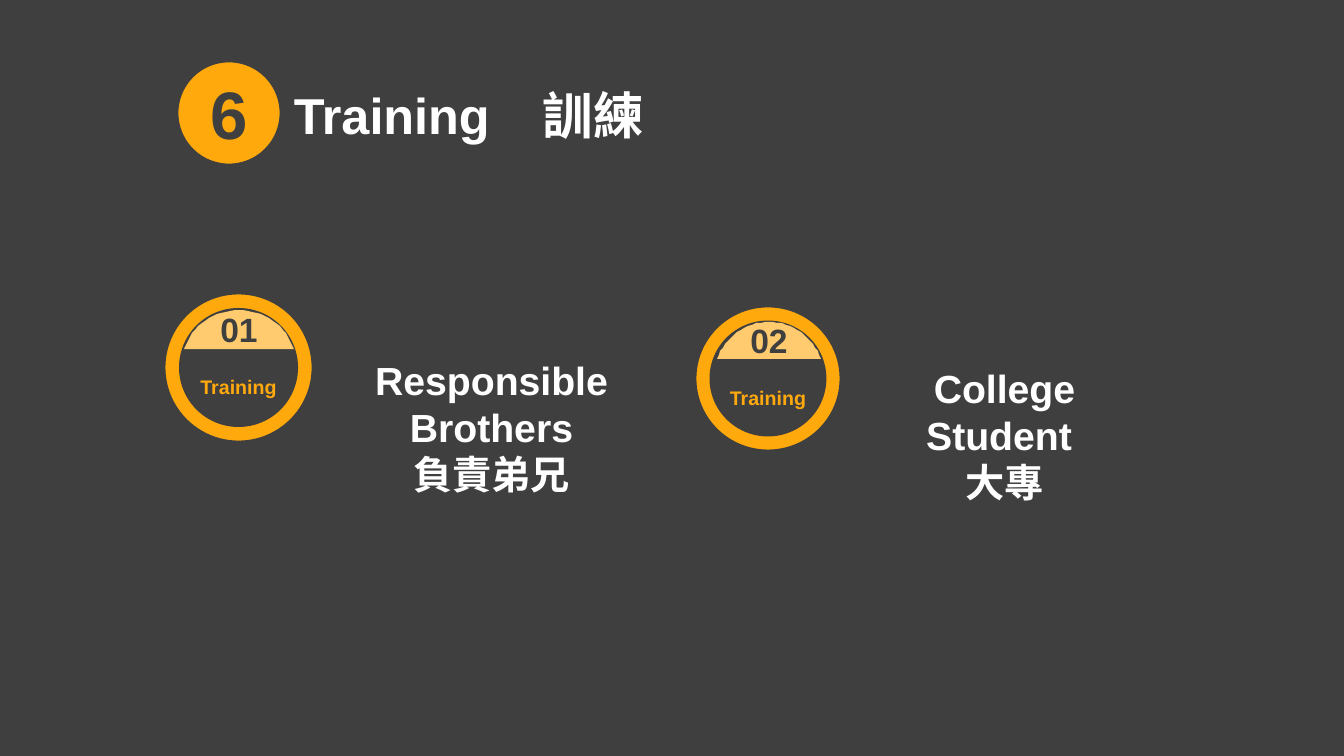
from math import asin, cos, pi, sin

from lxml import etree
from pptx import Presentation
from pptx.dml.color import RGBColor
from pptx.enum.shapes import MSO_SHAPE
from pptx.enum.text import MSO_ANCHOR, MSO_AUTO_SIZE, PP_ALIGN
from pptx.oxml.ns import qn
from pptx.util import Emu, Pt

PX = 914400 / 100.8
WIDTH, HEIGHT = 1344, 756
FONT = "Arial"
COLORS = {"dark": "3F3F3F", "orange": "FFA90D", "light": "FFCB6E", "white": "FFFFFF"}
OVAL, DONUT = MSO_SHAPE.OVAL, MSO_SHAPE.DONUT
CENTER, LEFT = PP_ALIGN.CENTER, PP_ALIGN.LEFT
TOP, MIDDLE, BOTTOM = MSO_ANCHOR.TOP, MSO_ANCHOR.MIDDLE, MSO_ANCHOR.BOTTOM
FIT_SHAPE = MSO_AUTO_SIZE.SHAPE_TO_FIT_TEXT
ARC_STEPS = 32


def px(length):
    return Emu(round(length * PX))


def rgb(name):
    return RGBColor.from_string(COLORS[name])


def write(shape, text, size, color, align=CENTER, anchor=MIDDLE):
    frame = shape.text_frame
    frame.text = text
    frame.word_wrap = True
    frame.vertical_anchor = anchor
    for paragraph in frame.paragraphs:
        paragraph.alignment = align
        for run in paragraph.runs:
            run.font.name = FONT
            run.font.size = Pt(size)
            run.font.bold = True
            run.font.color.rgb = rgb(color)
    return frame


def set_margins(frame, top=0):
    frame.margin_left = frame.margin_right = frame.margin_bottom = 0
    frame.margin_top = px(top)


def paint(shape, fill, outlined):
    shape.shadow.inherit = False
    shape.fill.solid()
    shape.fill.fore_color.rgb = rgb(fill)
    if outlined:
        shape.line.color.rgb = rgb("dark")
        shape.line.width = Pt(2)
    else:
        shape.line.fill.background()


def add_round(slide, kind, box, text, size, color, margin_top=0):
    shape = slide.shapes.add_shape(kind, *map(px, box))
    paint(shape, "orange", True)
    set_margins(write(shape, text, size, color), margin_top)
    return shape


def add_text(slide, box, text, size, align=CENTER, anchor=TOP):
    shape = slide.shapes.add_textbox(*map(px, box))
    return write(shape, text, size, "white", align, anchor)


def add_cap(slide, box, number):
    """Circle segment whose chord is the bottom edge of the box."""
    left, top, width, height = box
    radius = (width ** 2 / 4 + height ** 2) / (2 * height)
    half_angle = asin(width / 2 / radius)
    angles = [half_angle * (2 * step / ARC_STEPS - 1) for step in range(ARC_STEPS + 1)]
    points = [(left + width / 2 + radius * sin(angle),
               top + radius * (1 - cos(angle))) for angle in angles]
    builder = slide.shapes.build_freeform(*points[0], scale=PX)
    builder.add_line_segments(points[1:], close=True)
    cap = builder.convert_to_shape()
    paint(cap, "light", False)
    set_margins(write(cap, number, 24, "dark"))


def add_heading(slide, box, number, title, tab):
    left, top, width, height = box
    add_round(slide, OVAL, (left, top, height, height), number, 48, "dark")
    title_left = left + height + 3
    frame = add_text(slide, (title_left, top + 1, left + width - title_left, 88),
                     title, 36, LEFT, BOTTOM)
    paragraph = frame.paragraphs[0]
    tabs = etree.SubElement(paragraph._p.get_or_add_pPr(), qn("a:tabLst"))
    etree.SubElement(tabs, qn("a:tab"), pos=str(px(tab)), algn="l")
    paragraph.line_spacing = 0.9


def add_training(slide, ring_box, cap_box, text_box, number, audience):
    ring = add_round(slide, DONUT, ring_box, "Training", 14, "orange", 39)
    ring.adjustments[0] = 0.11
    add_cap(slide, cap_box, number)
    frame = add_text(slide, text_box, audience, 28)
    frame.auto_size = FIT_SHAPE


def main():
    presentation = Presentation()
    presentation.slide_width, presentation.slide_height = px(WIDTH), px(HEIGHT)
    slide = presentation.slides.add_slide(presentation.slide_layouts[6])
    slide.background.fill.solid()
    slide.background.fill.fore_color.rgb = rgb("dark")

    add_heading(slide, (177, 61, 665, 104), "6", "Training\t訓練", 249)
    add_training(slide, (695, 306, 146, 145), (717, 322, 104, 37),
                 (850, 359, 309, 152), "02", "College Student \n大專")
    add_training(slide, (164, 293, 149, 149), (184, 310, 110, 39),
                 (294, 351, 395, 152), "01", "Responsible Brothers\n負責弟兄")
    presentation.save("out.pptx")


if __name__ == "__main__":
    main()
